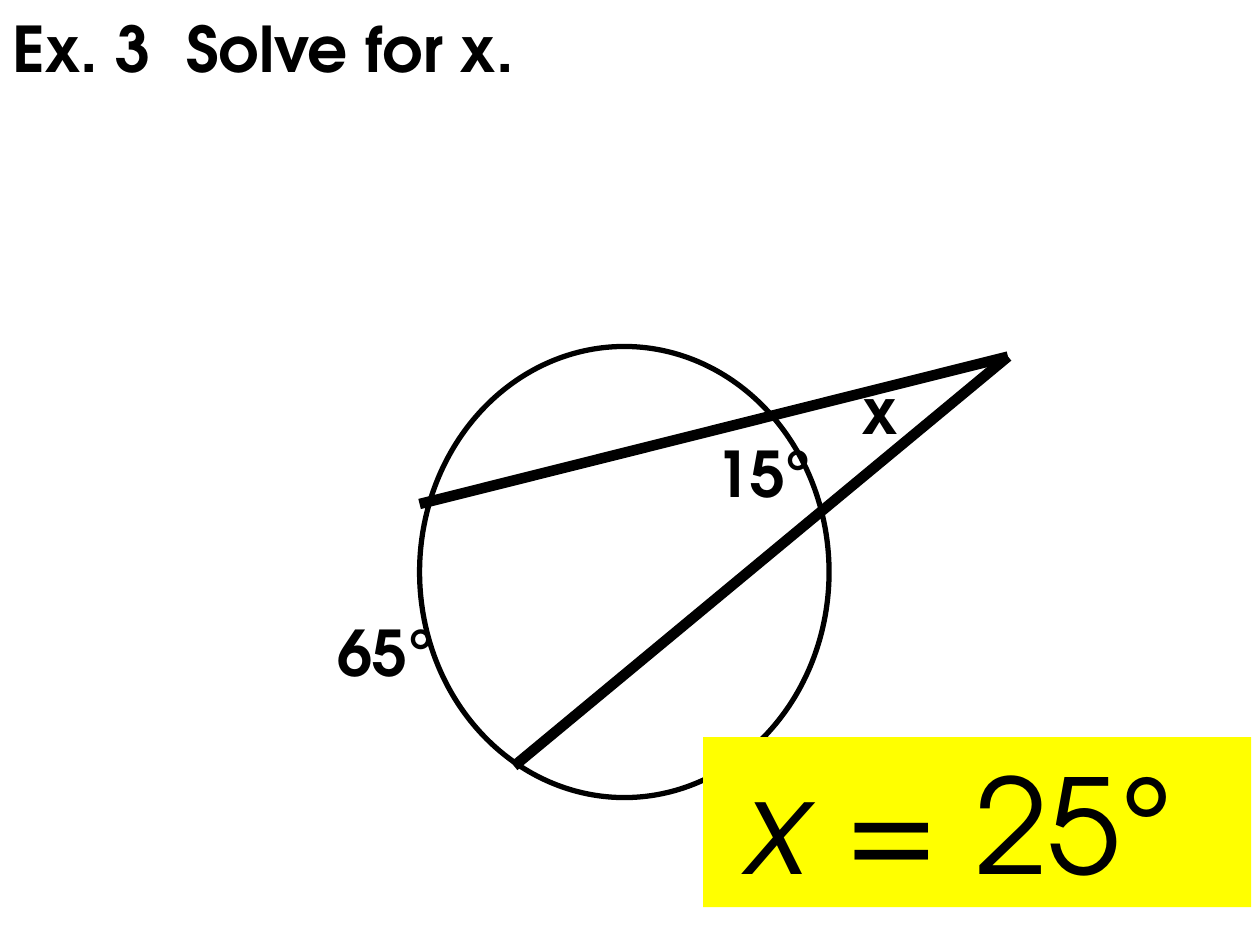
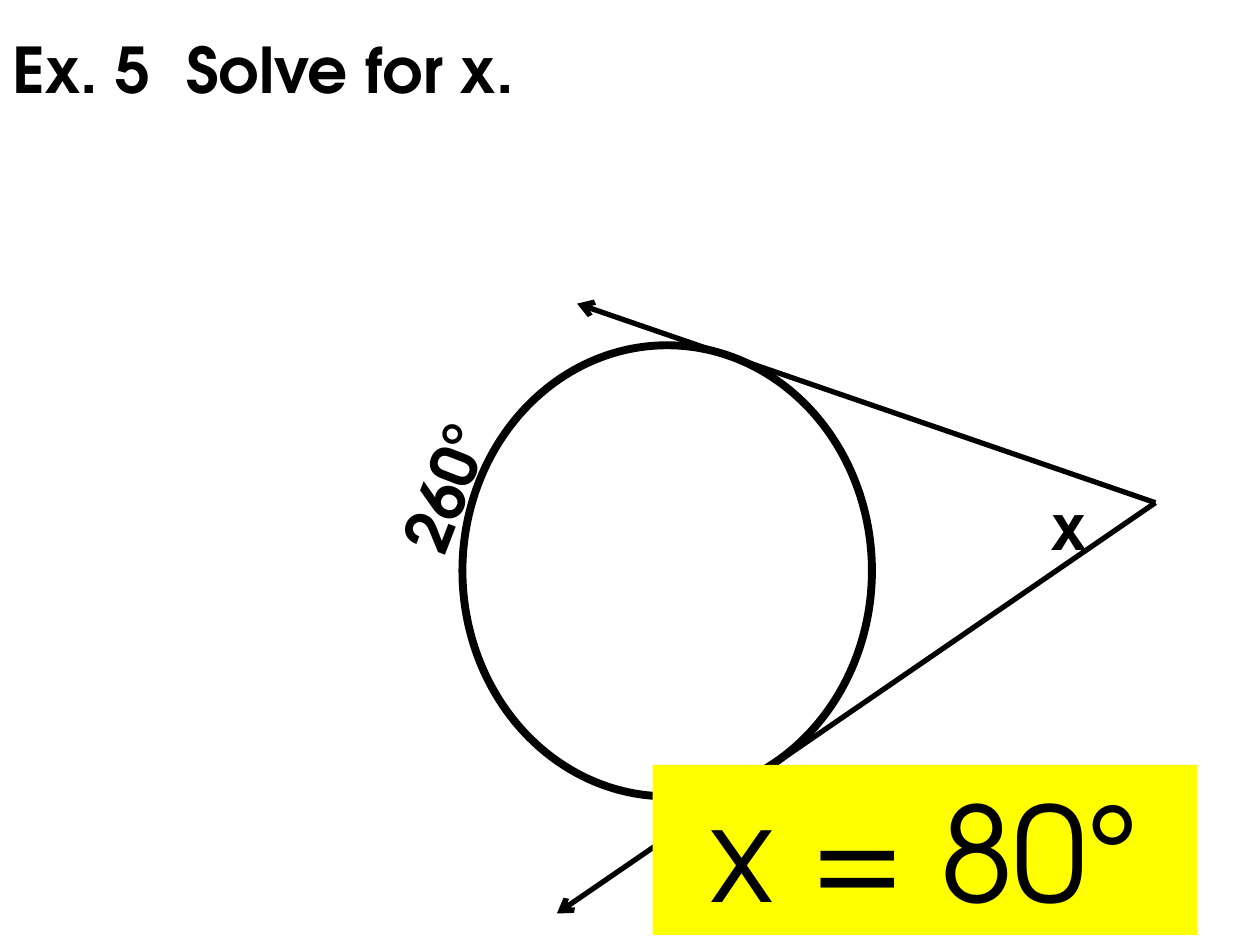
"""Build two worked examples on angles formed outside a circle."""
from lxml.etree import SubElement
from pptx import Presentation
from pptx.dml.color import RGBColor
from pptx.enum.shapes import MSO_CONNECTOR, MSO_SHAPE
from pptx.enum.text import MSO_ANCHOR, MSO_AUTO_SIZE, PP_ALIGN
from pptx.oxml.ns import qn
from pptx.util import Inches, Pt

THEME = {
    "ink": RGBColor(0, 0, 0),
    "answer_fill": RGBColor(255, 255, 0),
    "label": {"name": "TeX Gyre Adventor", "size": Pt(36), "bold": True},
    "answer": {"name": "TeX Gyre Adventor", "size": Pt(75), "bold": False},
}

EXAMPLES = [
    {
        "title": ("Ex. 3  Solve for x.", 0),
        "circle": (3.33, 2.75, 3),
        "vertex": (8, 2.83),
        "ray_ends": [(4.08, 6.08), (3.33, 4)],
        "ray_width": 6,
        "arrows": False,
        "labels": [
            ("x", (6.75, 2.9, 0.75, 0.71), 0, True),
            ("65°", (2.58, 4.82, 1.42, 0.71), 0, True),
            ("15°", (5.58, 3.4, 1.5, 0.71), 0, True),
        ],
        "answer": ([("x ", True), ("= 25° ", False)], (5.58, 5.85, 4.35, 1.35)),
    },
    {
        "title": ("Ex. 5  Solve for x.", 0.17),
        "circle": (3.67, 2.74, 4.5),
        "vertex": (9.17, 3.99),
        "ray_ends": [(4.42, 7.25), (4.58, 2.41)],
        "ray_width": 3,
        "arrows": True,
        "labels": [
            ("x", (8.25, 3.82, 0.48, 0.71), 0, False),
            ("260°", (2.91, 3.51, 1.25, 0.71), 291.1, True),
        ],
        "answer": ([("x = 80°", False)], (5.18, 6.07, 4.32, 1.35)),
    },
]


def add_run(p, text, style, italic=False):
    r = p.add_run()
    r.text = text
    for key, value in {**THEME[style], "italic": italic}.items():
        setattr(r.font, key, value)
    r.font.color.rgb = THEME["ink"]


def add_label(s, text, box, **frame):
    sp = s.shapes.add_textbox(*map(Inches, box))
    for key, value in frame.items():
        setattr(sp.text_frame, key, value)
    add_run(sp.text_frame.paragraphs[0], text, "label")
    return sp


prs = Presentation()
prs.slide_width, prs.slide_height = Inches(10), Inches(7.5)

for ex in EXAMPLES:
    s = prs.slides.add_slide(prs.slide_layouts[6])

    left, top, width = ex["circle"]
    circle = s.shapes.add_shape(MSO_SHAPE.OVAL, *map(Inches, (left, top, 3.25, 3.58)))
    circle.shadow.inherit = False
    circle.fill.background()
    circle.line.color.rgb = THEME["ink"]
    circle.line.width = Pt(width)

    for end in ex["ray_ends"]:
        ray = s.shapes.add_connector(
            MSO_CONNECTOR.STRAIGHT, *map(Inches, end + ex["vertex"])
        )
        ray.line.color.rgb = THEME["ink"]
        ray.line.width = Pt(ex["ray_width"])
        if ex["arrows"]:
            SubElement(ray.line._get_or_add_ln(), qn("a:headEnd"), type="arrow")
        SubElement(ray._element.spPr, qn("a:effectLst"))

    title, title_top = ex["title"]
    add_label(s, title, (0, title_top, 7.83, 0.75),
              word_wrap=True, vertical_anchor=MSO_ANCHOR.MIDDLE)

    for text, box, angle, wrap in ex["labels"]:
        label = add_label(s, text, box, word_wrap=wrap,
                          auto_size=MSO_AUTO_SIZE.SHAPE_TO_FIT_TEXT)
        label.rotation = angle

    runs, box = ex["answer"]
    answer = s.shapes.add_shape(MSO_SHAPE.RECTANGLE, *map(Inches, box))
    answer.shadow.inherit = False
    answer.fill.solid()
    answer.fill.fore_color.rgb = THEME["answer_fill"]
    answer.line.fill.background()
    tf = answer.text_frame
    frame = {"word_wrap": True, "vertical_anchor": MSO_ANCHOR.TOP,
             "auto_size": MSO_AUTO_SIZE.SHAPE_TO_FIT_TEXT}
    for key, value in frame.items():
        setattr(tf, key, value)
    p = tf.paragraphs[0]
    p.alignment = PP_ALIGN.CENTER
    for text, italic in runs:
        add_run(p, text, "answer", italic)

prs.save("out.pptx")
